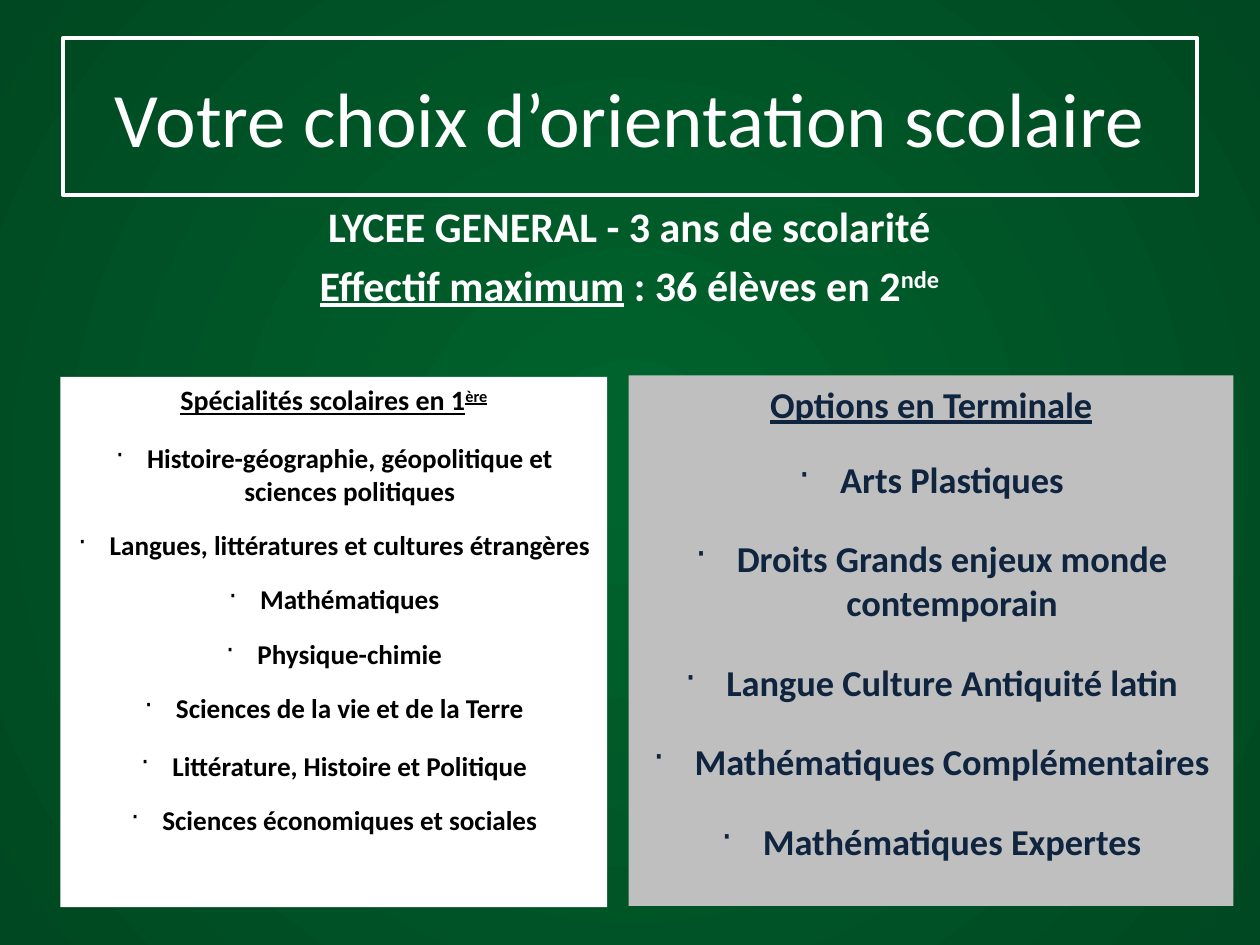
"""Build the slide on general high school subjects and options."""
from dataclasses import dataclass

from lxml import etree
from pptx import Presentation, util as u
from pptx.dml.color import RGBColor
from pptx.enum import shapes, text
from pptx.oxml import ns


@dataclass(frozen=True)
class Theme:
    font: str = "Calibri"
    white: str = "FFFFFF"
    black: str = "000000"
    navy: str = "0F243E"
    grey: str = "BFBFBF"
    center: str = "00642D"
    edge: str = "004821"
    title: float = 44
    intro: float = 24
    option: float = 20.8
    heading: float = 16
    subject: float = 15.5


theme = Theme()
rgb = RGBColor.from_string


def add_run(p, content, size, color, bold=True, underline=False, raised=False):
    p.alignment = text.PP_ALIGN.CENTER
    r = p.add_run()
    r.text = content
    r.font.name, r.font.size = theme.font, u.Pt(size)
    r.font.color.rgb = rgb(color)
    r.font.bold, r.font.underline = bold, underline
    if raised:
        r._r.get_or_add_rPr().set("baseline", "30000")


def set_bullet(p, indent):
    pPr = p._p.get_or_add_pPr()
    pPr.set("marL", str(u.Inches(indent)))
    pPr.set("indent", str(-u.Inches(indent)))
    etree.SubElement(pPr, ns.qn("a:buChar")).set("char", "·")


prs = Presentation()
prs.slide_width, prs.slide_height = u.Inches(10), u.Inches(7.5)
s = prs.slides.add_slide(prs.slide_layouts[5])

fill = s.background.fill
fill.gradient()
for stop, color in zip(fill.gradient_stops, (theme.center, theme.edge)):
    stop.color.rgb = rgb(color)
grad = s._element.find(".//" + ns.qn("a:gradFill"))
grad.remove(grad.find(ns.qn("a:lin")))
radial = etree.SubElement(grad, ns.qn("a:path"))
radial.set("path", "circle")
rect = etree.SubElement(radial, ns.qn("a:fillToRect"))
for side in "ltrb":
    rect.set(side, "50000")

title = s.shapes.title
title.left, title.top = u.Inches(0.5), u.Inches(0.3)
title.width, title.height = u.Inches(9), u.Inches(1.25)
title.line.color.rgb = rgb(theme.white)
title.line.width = u.Pt(2)
title.text_frame.vertical_anchor = text.MSO_ANCHOR.MIDDLE
add_run(title.text_frame.paragraphs[0], "Votre choix d’orientation scolaire",
        theme.title, theme.white, bold=False)

panels = [
    dict(box=(0.48, 2.99, 4.34, 4.21), fill=theme.white, color=theme.black,
         heading=[("Spécialités scolaires en 1", False), ("ère", True)],
         heading_size=theme.heading, size=theme.subject, indent=0.25,
         items=[("Histoire-géographie, géopolitique et sciences politiques", 14.2),
                ("Langues, littératures et cultures étrangères", 12.5),
                ("Mathématiques", 12.5),
                ("Physique-chimie", 12.5),
                ("Sciences de la vie et de la Terre", 12.5),
                ("Littérature, Histoire et Politique", 14.2),
                ("Sciences économiques et sociales", 12.5)]),
    dict(box=(4.99, 2.98, 4.8, 4.21), fill=theme.grey, color=theme.navy,
         heading=[("Options en Terminale", False)],
         heading_size=theme.option, size=theme.option, indent=0.33,
         items=[("Arts Plastiques", 18),
                ("Droits Grands enjeux monde contemporain", 20.5),
                ("Langue Culture Antiquité latin", 20.5),
                ("Mathématiques Complémentaires", 20.5),
                ("Mathématiques Expertes", 20.5)]),
]
for panel in panels:
    sp = s.shapes.add_shape(shapes.MSO_SHAPE.RECTANGLE, *map(u.Inches, panel["box"]))
    sp.shadow.inherit = False
    sp.fill.solid()
    sp.fill.fore_color.rgb = rgb(panel["fill"])
    sp.line.fill.background()
    tf = sp.text_frame
    tf.word_wrap = True
    tf.vertical_anchor = text.MSO_ANCHOR.TOP
    for content, raised in panel["heading"]:
        add_run(tf.paragraphs[0], content, panel["heading_size"], panel["color"],
                underline=True, raised=raised)
    for content, gap in panel["items"]:
        p = tf.add_paragraph()
        p.space_before = u.Pt(gap)
        add_run(p, content, panel["size"], panel["color"])
        set_bullet(p, panel["indent"])

intro = s.shapes.add_textbox(u.Inches(0.5), u.Inches(1.54), u.Inches(8.99), u.Inches(0.99))
tf = intro.text_frame
tf.word_wrap = True
add_run(tf.paragraphs[0], "LYCEE GENERAL - 3 ans de scolarité", theme.intro, theme.white)
p = tf.add_paragraph()
p.space_before = u.Pt(4.8)
add_run(p, "Effectif maximum", theme.intro, theme.white, underline=True)
add_run(p, " : 36 élèves en 2", theme.intro, theme.white)
add_run(p, "nde", theme.intro, theme.white, raised=True)

prs.save("out.pptx")
